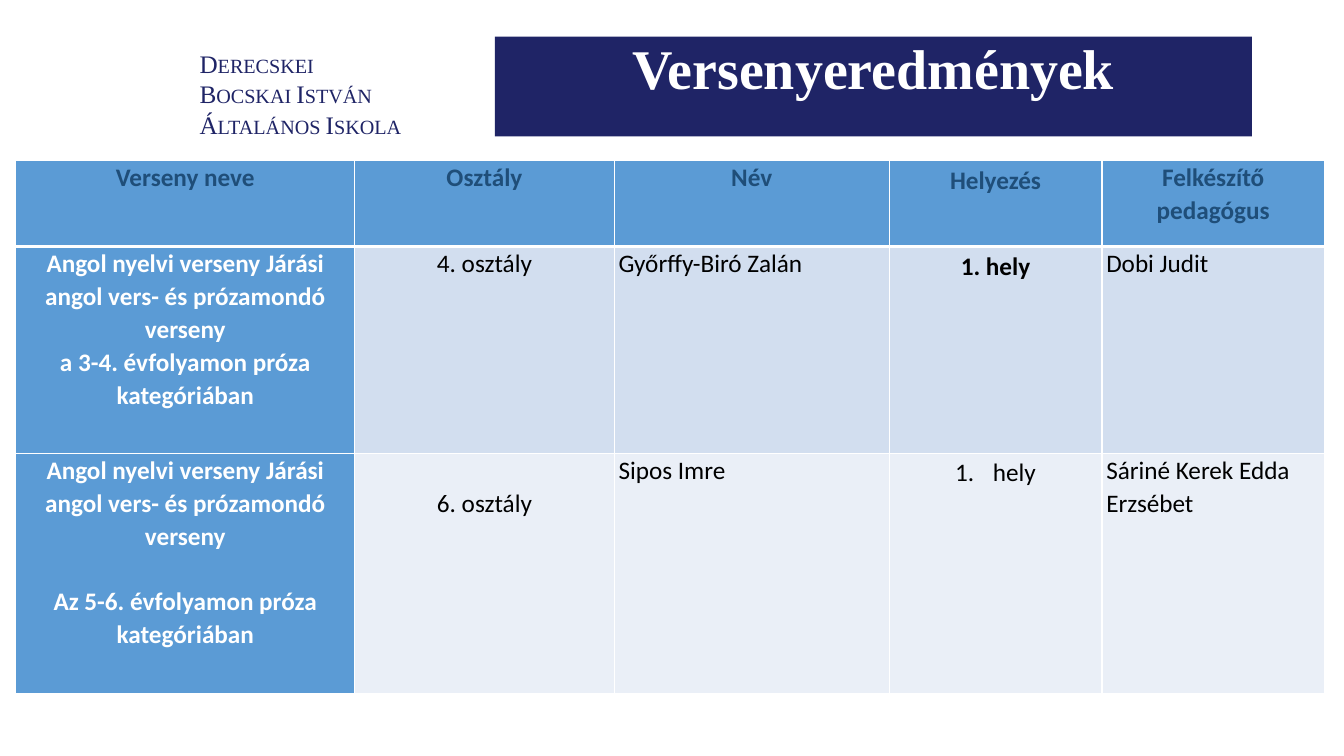
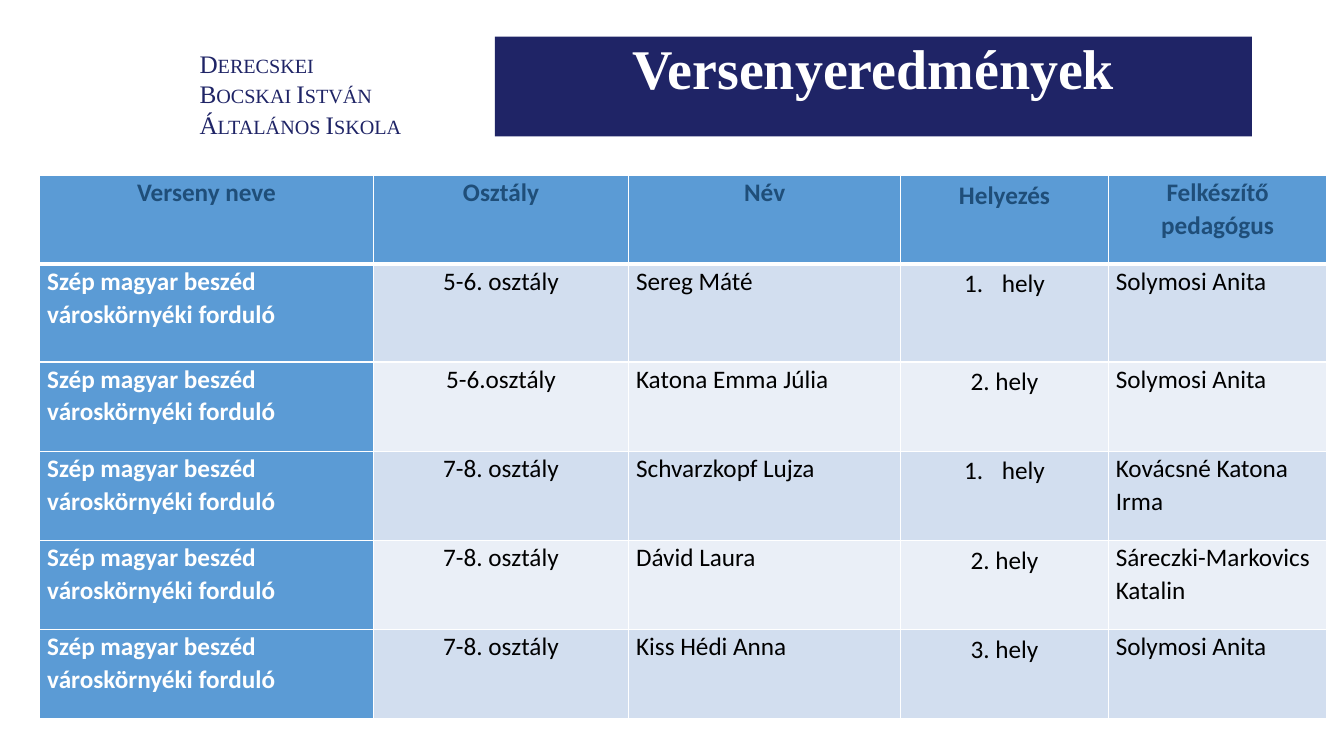
from pptx import Presentation
from pptx.dml.color import RGBColor
from pptx.enum.text import MSO_ANCHOR, MSO_AUTO_SIZE, PP_ALIGN
from pptx.oxml.ns import qn
from pptx.util import Cm, Pt
from lxml.etree import SubElement

COLORS = {
    "navy": "1F2466",
    "white": "FFFFFF",
    "black": "000000",
    "header_text": "1F4E79",
    "header_fill": "5B9BD5",
    "odd_row": "D2DEEF",
    "even_row": "EAEFF7",
}
SERIF = "Times New Roman"
SANS = "Calibri"
SCHOOL = ["Derecskei", "Bocskai István", "Általános Iskola"]
HEADERS = ["Verseny neve", "Osztály", "Név", "Helyezés", "Felkészítő pedagógus"]
PLACE_COLUMN = HEADERS.index("Helyezés")
CENTERED_COLUMNS = (1, PLACE_COLUMN)


def color(name):
    return RGBColor.from_string(COLORS[name])


class ResultDeck:
    def __init__(self):
        self.deck = Presentation()
        self.deck.slide_width = Cm(33.87)
        self.deck.slide_height = Cm(19.05)
        self.page = None

    def add_page(self, title):
        self.page = self.deck.slides.add_slide(self.deck.slide_layouts[5])
        self.school_name()
        self.banner(title)

    def style(self, para, font, size, color_name, bold=False):
        para.font.name = font
        para.font.size = Pt(size)
        para.font.bold = bold
        para.font.color.rgb = color(color_name)

    def school_name(self):
        box = self.page.shapes.add_textbox(Cm(4.78), Cm(1.07), Cm(7.5), Cm(2.6))
        frame = box.text_frame
        frame.word_wrap = True
        frame.text = "\n".join(SCHOOL)
        for para in frame.paragraphs:
            para.line_spacing = Pt(22)
            self.style(para, SERIF, 18, "navy")
            para._p.pPr.find(qn("a:defRPr")).set("cap", "small")

    def banner(self, text):
        title = self.page.shapes.title
        title.left, title.top = Cm(12.47), Cm(0.92)
        title.width, title.height = Cm(19.08), Cm(2.52)
        title.fill.solid()
        title.fill.fore_color.rgb = color("navy")
        frame = title.text_frame
        frame.text = text
        frame.auto_size = MSO_AUTO_SIZE.NONE
        frame.vertical_anchor = MSO_ANCHOR.TOP
        para = frame.paragraphs[0]
        para.alignment = PP_ALIGN.CENTER
        para.line_spacing = 0.9
        self.style(para, SERIF, 40, "white", bold=True)

    def table(self, left, top, widths, heights, rows, inset, center_names=False):
        """Draw the header and result rows; lengths are in centimetres."""
        frame = self.page.shapes.add_table(
            len(heights), len(widths), Cm(left), Cm(top),
            Cm(sum(widths)), Cm(sum(heights)))
        table = frame.table
        table.first_col = True
        for column, width in zip(table.columns, widths):
            column.width = Cm(width)
        for row, height in zip(table.rows, heights):
            row.height = Cm(height)
        centered = CENTERED_COLUMNS + ((0,) if center_names else ())
        for row, texts in enumerate([HEADERS] + rows):
            for column, text in enumerate(texts):
                cell = table.cell(row, column)
                cell.margin_left = cell.margin_right = Cm(inset)
                cell.margin_top = cell.margin_bottom = 0
                self.cell_borders(cell, row)
                self.cell_fill(cell, row, column)
                self.cell_text(cell, row, column, text, row == 0 or column in centered)
        return table

    def cell_borders(self, cell, row):
        properties = cell._tc.get_or_add_tcPr()
        thick = {0: "lnB", 1: "lnT"}.get(row)
        for side in ("lnL", "lnR", "lnT", "lnB"):
            width = Pt(3 if side == thick else 1)
            line = SubElement(properties, qn(f"a:{side}"), w=str(width))
            fill = SubElement(line, qn("a:solidFill"))
            SubElement(fill, qn("a:srgbClr"), val=COLORS["white"])

    def cell_fill(self, cell, row, column):
        band = "odd_row" if row % 2 else "even_row"
        cell.fill.solid()
        cell.fill.fore_color.rgb = color(
            "header_fill" if row == 0 or column == 0 else band)

    def cell_text(self, cell, row, column, text, centered):
        cell.text_frame.text = text
        if row == 0:
            text_color = "header_text"
        else:
            text_color = "white" if column == 0 else "black"
        for para in cell.text_frame.paragraphs:
            para.alignment = PP_ALIGN.CENTER if centered else PP_ALIGN.LEFT
            para.line_spacing = 1.15 if column == PLACE_COLUMN else 1.07
            if text == "hely":
                self.number(para)
            self.style(para, SANS, 18, text_color, bold=row == 0 or column == 0)

    def number(self, para):
        """Turn the paragraph into the first item of a numbered list."""
        properties = para._p.get_or_add_pPr()
        properties.set("marL", str(Cm(0.95)))
        properties.set("indent", str(-Cm(0.95)))
        SubElement(properties, qn("a:buFont"), typeface="+mj-lt")
        SubElement(properties, qn("a:buAutoNum"), type="arabicPeriod")


def english_page(results):
    contest = "Angol nyelvi verseny Járási angol vers- és prózamondó verseny"
    results.add_page("Versenyeredmények")
    table = results.table(
        0.4, 4.05, [8.54, 6.54, 6.93, 5.36, 5.61], [2.16, 5.21, 6.07],
        [
            [f"{contest}\na 3-4. évfolyamon próza\nkategóriában",
             "4. osztály", "Győrffy-Biró Zalán", "1. hely", "Dobi Judit"],
            [f"{contest}\nAz 5-6. évfolyamon próza kategóriában",
             "6. osztály", "Sipos Imre", "hely", "Sáriné Kerek Edda Erzsébet"],
        ],
        inset=0.11, center_names=True)
    table.cell(1, PLACE_COLUMN).text_frame.paragraphs[0].font.bold = True
    table.cell(2, 0).text_frame.paragraphs[1].space_before = Pt(23.5)
    table.cell(2, 1).margin_top = Cm(0.83)


def speech_page(results):
    entries = [
        ["5-6. osztály", "Sereg Máté", "hely", "Solymosi Anita"],
        ["5-6.osztály", "Katona Emma Júlia", "2. hely", "Solymosi Anita"],
        ["7-8. osztály", "Schvarzkopf Lujza", "hely", "Kovácsné Katona Irma"],
        ["7-8. osztály", "Dávid Laura", "2. hely", "Sáreczki-Markovics Katalin"],
        ["7-8. osztály", "Kiss Hédi Anna", "3. hely", "Solymosi Anita"],
    ]
    results.add_page("Versenyeredmények")
    results.table(
        1, 4.42, [8.41, 6.43, 6.86, 5.23, 5.51], [2.24, 2.46] + [2.25] * 4,
        [["Szép magyar beszéd városkörnyéki forduló"] + entry for entry in entries],
        inset=0.19)


def main():
    results = ResultDeck()
    english_page(results)
    speech_page(results)
    results.deck.save("out.pptx")


if __name__ == "__main__":
    main()
